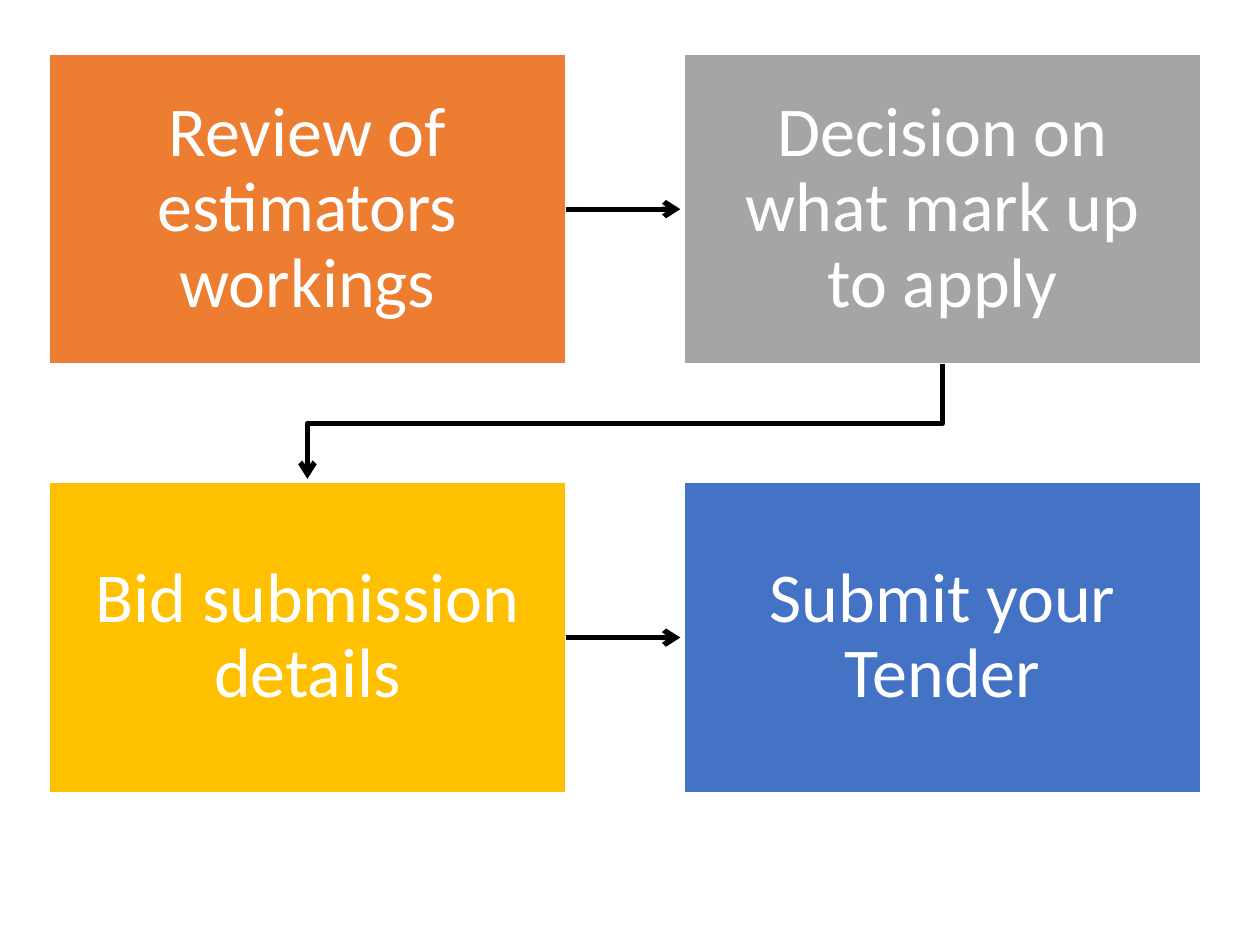
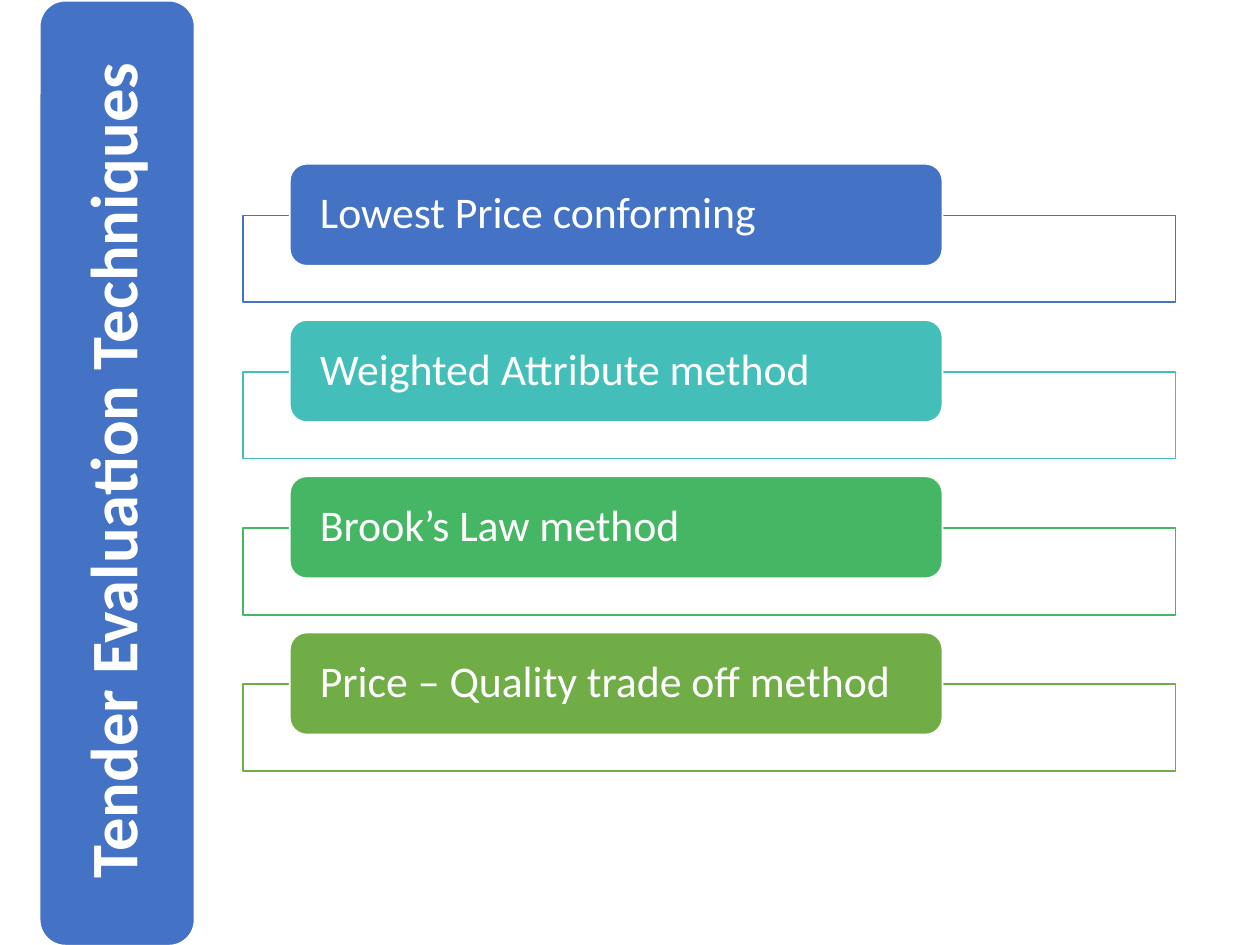
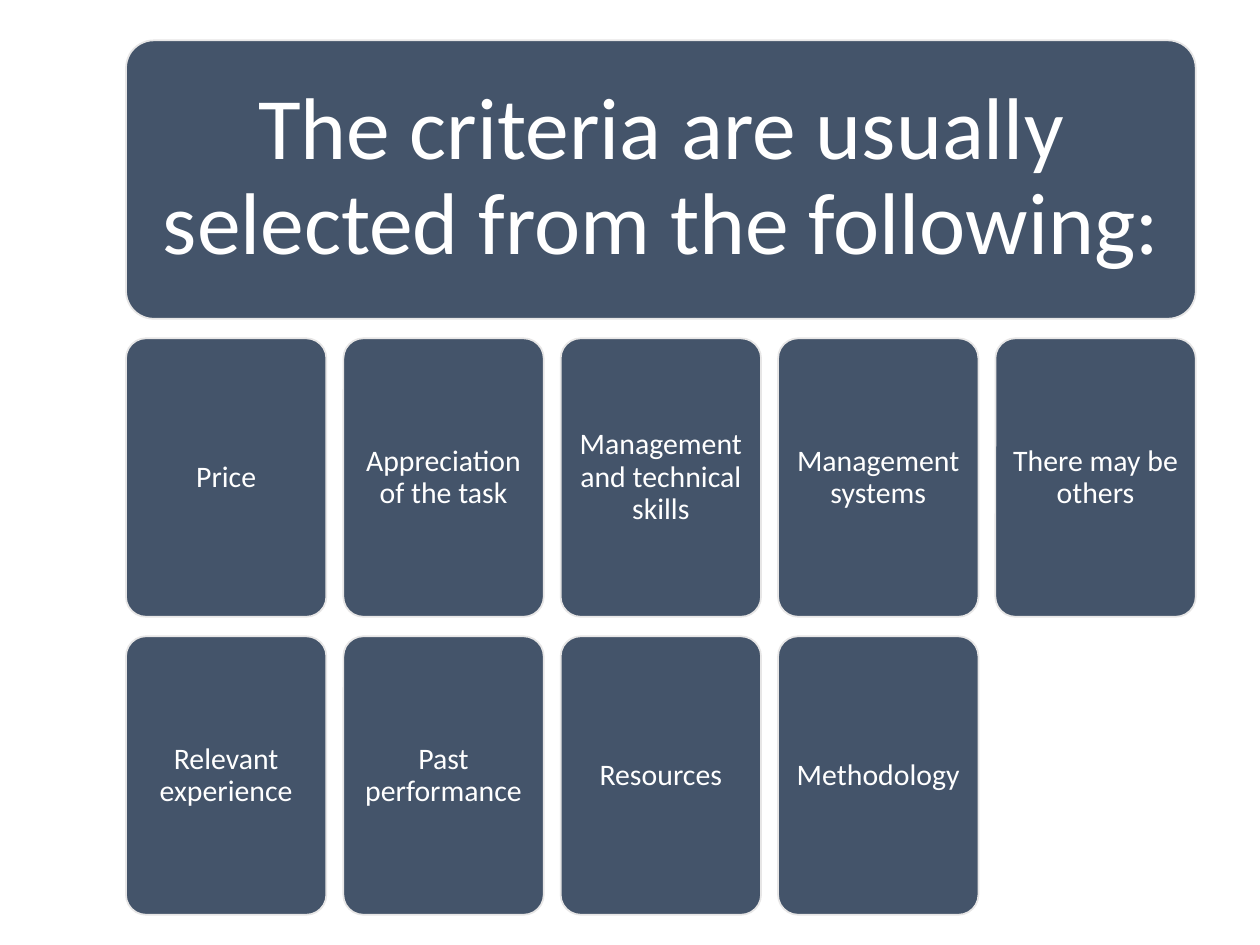
import pptx
import pptx.util
import pptx.dml.color
import pptx.enum.shapes
import pptx.enum.text
import pptx.oxml.ns
import lxml.etree

Inches = pptx.util.Inches
Pt = pptx.util.Pt
RGBColor = pptx.dml.color.RGBColor
SHAPE = pptx.enum.shapes.MSO_SHAPE
ALIGN = pptx.enum.text.PP_ALIGN
qn = pptx.oxml.ns.qn

FONT = "Calibri"
WHITE = RGBColor(0xFF, 0xFF, 0xFF)
BLACK = RGBColor(0x00, 0x00, 0x00)
ORANGE = RGBColor(0xED, 0x7D, 0x31)
GRAY = RGBColor(0xA5, 0xA5, 0xA5)
GOLD = RGBColor(0xFF, 0xC0, 0x00)
BLUE = RGBColor(0x44, 0x72, 0xC4)
TEAL = RGBColor(0x43, 0xBE, 0xB9)
EMERALD = RGBColor(0x45, 0xB6, 0x64)
GREEN = RGBColor(0x70, 0xAD, 0x47)
SLATE = RGBColor(0x44, 0x54, 0x6A)
PALE = RGBColor(0xE7, 0xE6, 0xE6)


def add_box(slide, kind, left, top, width, height, fill, line):
    box = slide.shapes.add_shape(
        kind, Inches(left), Inches(top), Inches(width), Inches(height))
    box.shadow.inherit = False
    box.fill.solid()
    box.fill.fore_color.rgb = fill
    box.line.color.rgb = line
    box.line.width = Pt(1)
    return box


def write_text(shape, text, size, inset_x, inset_y, align=ALIGN.CENTER, bold=False):
    frame = shape.text_frame
    frame.text = text
    frame.word_wrap = True
    frame.auto_size = pptx.enum.text.MSO_AUTO_SIZE.NONE
    frame.vertical_anchor = pptx.enum.text.MSO_ANCHOR.MIDDLE
    frame.margin_left = frame.margin_right = Inches(inset_x)
    frame.margin_top = frame.margin_bottom = Inches(inset_y)
    para = frame.paragraphs[0]
    para.alignment = align
    para.line_spacing = 0.9
    font = para.runs[0].font
    font.name = FONT
    font.size = Pt(size)
    font.bold = bold
    font.color.rgb = WHITE


deck = pptx.Presentation()
deck.slide_width = Inches(10)
deck.slide_height = Inches(7.5)
title_only = deck.slide_layouts[5]
blank = deck.slide_layouts[6]

# Slide 1: four steps in a two by two grid
slide = deck.slides.add_slide(blank)
steps = [
    ("Review of estimators workings", ORANGE),
    ("Decision on what mark up to apply", GRAY),
    ("Bid submission details", GOLD),
    ("Submit your Tender", BLUE),
]
step_left, step_top = 0.39, 0.43
step_width, step_height = 4.1, 2.46
step_pitch_x, step_pitch_y = 5.04, 3.4
arrow_length = 0.91
step_boxes = []
for index, (text, color) in enumerate(steps):
    row, column = divmod(index, 2)
    box = add_box(slide, SHAPE.RECTANGLE, step_left + column * step_pitch_x,
                  step_top + row * step_pitch_y, step_width, step_height, color, WHITE)
    write_text(box, text, 40, 0.31, 0.31)
    step_boxes.append(box)

# Arrows along each row
arrows = []
for box in step_boxes[::2]:
    start_x = box.left + box.width
    middle_y = box.top + box.height // 2
    arrow = slide.shapes.add_connector(
        pptx.enum.shapes.MSO_CONNECTOR.STRAIGHT,
        start_x, middle_y, start_x + Inches(arrow_length), middle_y)
    arrow.begin_connect(box, 3)
    lxml.etree.SubElement(arrow.element.spPr, qn("a:effectLst"))
    arrows.append(arrow)

# Bent arrow from the first row to the second
start_x = step_left + step_pitch_x + step_width / 2
end_x = step_left + step_width / 2
start_y = step_top + step_height
bend_y = start_y + 0.47
builder = slide.shapes.build_freeform(Inches(start_x), Inches(start_y))
builder.add_line_segments(
    [(Inches(start_x), Inches(bend_y)), (Inches(end_x), Inches(bend_y)),
     (Inches(end_x), Inches(start_y + arrow_length))], close=False)
bent_arrow = builder.convert_to_shape()
bent_arrow.fill.background()
bent_arrow.shadow.inherit = False
arrows.append(bent_arrow)

for arrow in arrows:
    arrow.line.color.rgb = BLACK
    arrow.line.width = Pt(3)
    line = arrow.element.spPr.find(qn("a:ln"))
    lxml.etree.SubElement(line, qn("a:tailEnd"), type="arrow")

# Slide 2: vertical title band and list of techniques
slide = deck.slides.add_slide(title_only)
band = add_box(slide, SHAPE.ROUNDED_RECTANGLE, -2.82, 3.14, 7.5, 1.23, BLUE, WHITE)
band.rotation = 270
title = slide.shapes.title
title.left, title.top = Inches(-2.76), Inches(3.18)
title.width, title.height = Inches(7.36), Inches(1.11)
title.rotation = 270
write_text(title, "Tender Evaluation Techniques", 38, 0.25, 0, bold=True)
band.element.addnext(title.element)

techniques = [
    ("Lowest Price conforming", BLUE),
    ("Weighted Attribute method", TEAL),
    ("Brook’s Law method", EMERALD),
    ("Price – Quality trade off method", GREEN),
]
for index, (text, color) in enumerate(techniques):
    top = 1.3 + index * 1.24
    add_box(slide, SHAPE.RECTANGLE, 1.93, top + 0.41, 7.4, 0.69, WHITE, color)
    label = add_box(slide, SHAPE.ROUNDED_RECTANGLE, 2.3, top, 5.18, 0.81, color, WHITE)
    write_text(label, text, 25, 0.2, 0, ALIGN.LEFT)

# Slide 3: heading above a grid of criteria
slide = deck.slides.add_slide(title_only)
grid_left, grid_top = 1, 0.32
grid_width = 8.49
card_width, card_height = 1.59, 2.21
card_pitch_x = (grid_width - card_width) / 4
card_pitch_y = 2.365
heading = add_box(slide, SHAPE.ROUNDED_RECTANGLE, grid_left, grid_top,
                  grid_width, card_height, SLATE, PALE)
heading.adjustments[0] = 0.1
title = slide.shapes.title
title.left, title.top = Inches(1.07), Inches(0.38)
title.width, title.height = Inches(8.36), Inches(2.08)
write_text(title, "The criteria are usually selected from the following:", 50, 0.21, 0.21)
heading.element.addnext(title.element)

criteria = [
    ["Price", "Appreciation of the task", "Management and technical skills",
     "Management systems", "There may be others"],
    ["Relevant experience", "Past performance", "Resources", "Methodology"],
]
for row, names in enumerate(criteria, start=1):
    for column, name in enumerate(names):
        card = add_box(slide, SHAPE.ROUNDED_RECTANGLE, grid_left + column * card_pitch_x,
                       grid_top + row * card_pitch_y, card_width, card_height, SLATE, PALE)
        card.adjustments[0] = 0.1
        write_text(card, name, 17, 0.07, 0.07)

deck.save("out.pptx")
